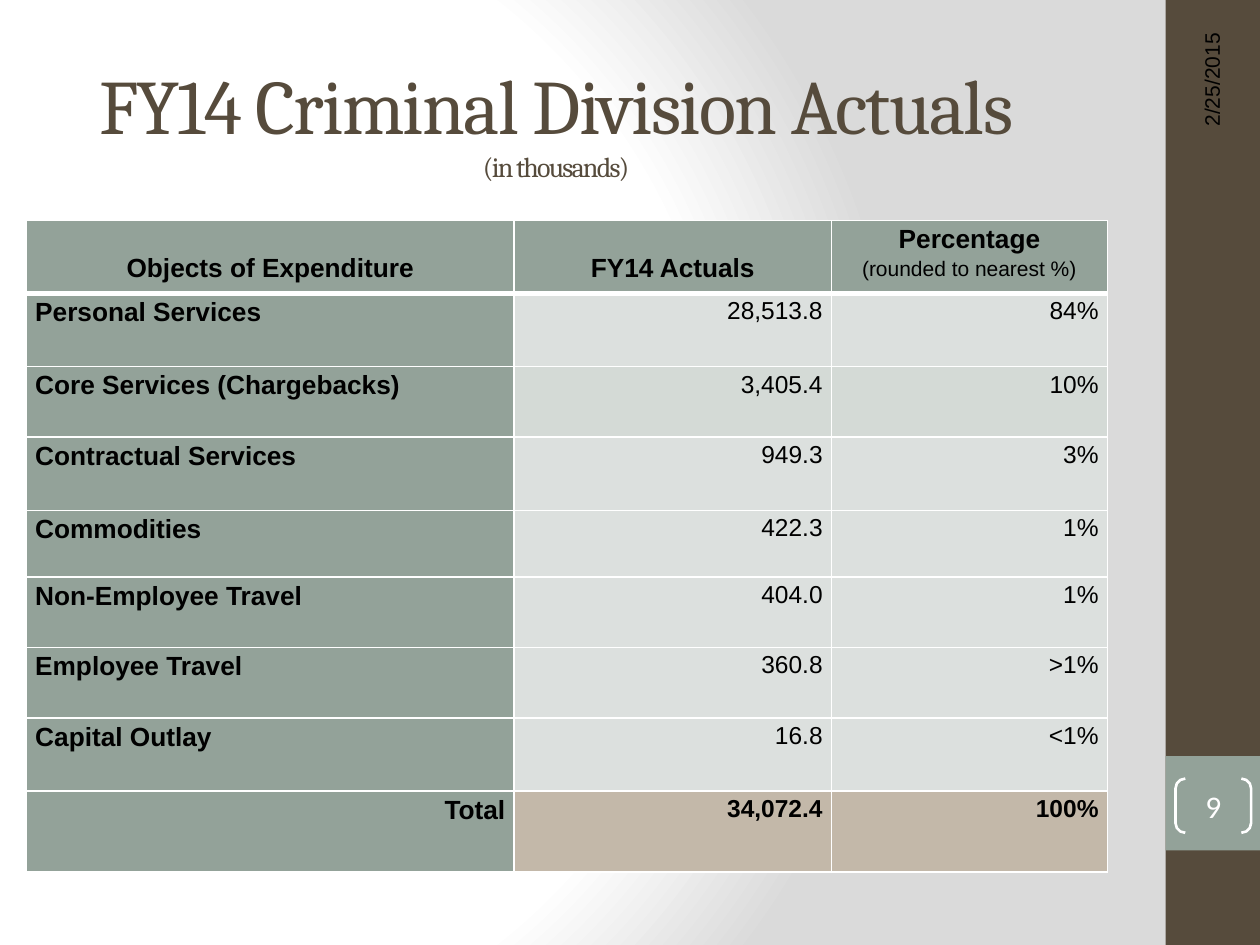
from lxml import etree
from pptx import Presentation
from pptx.dml.color import RGBColor
from pptx.enum.shapes import MSO_SHAPE as Shape
from pptx.enum.text import MSO_ANCHOR as Anchor, PP_ALIGN as Align
from pptx.oxml.ns import qn
from pptx.util import Inches, Pt

WHITE = RGBColor(0xFF, 0xFF, 0xFF)
BLACK = RGBColor(0x00, 0x00, 0x00)
BROWN = RGBColor(0x56, 0x4B, 0x3C)
SAGE = RGBColor(0x93, 0xA2, 0x99)
PALE = RGBColor(0xDC, 0xE0, 0xDE)
PALE_GREEN = RGBColor(0xD4, 0xDA, 0xD6)
TAN = RGBColor(0xC3, 0xB8, 0xA9)
GREY = RGBColor(0xDA, 0xDA, 0xDA)

COLUMN_WIDTHS = [3.87, 2.52, 2.19]
ROW_HEIGHTS = [0.58, 0.58, 0.56, 0.58, 0.53, 0.56, 0.56, 0.58, 0.64]
HEADER_LINE_HEIGHT = 0.23
HEADERS = [
    [("Objects of Expenditure", 15, True)],
    [("FY14 Actuals", 15, True)],
    [("Percentage", 15, True), ("(rounded to nearest %)", 12, False)],
]
EXPENDITURES = [
    ("Personal Services", "28,513.8", "84%"),
    ("Core Services (Chargebacks)", "3,405.4", "10%"),
    ("Contractual Services", "949.3", "3%"),
    ("Commodities", "422.3", "1%"),
    ("Non-Employee Travel", "404.0", "1%"),
    ("Employee Travel", "360.8", ">1%"),
    ("Capital Outlay", "16.8", "<1%"),
    ("Total", "34,072.4", "100%"),
]


class SlideBuilder:
    body_font = "Arial"
    title_font = "Cambria"
    number_font = "Calibri"

    def __init__(self, slide):
        self.slide = slide

    def add_run(self, paragraph, text, size, color=BLACK, font=None, bold=False):
        run = paragraph.add_run()
        run.text = text
        run.font.name = font or self.body_font
        run.font.size = Pt(size)
        run.font.bold = bold
        run.font.color.rgb = color
        return run

    def set_background(self, stops, focus):
        """Fill the background with a circular gradient around the focus box."""
        self.slide.background.fill.solid()
        properties = next(self.slide.element.iter(qn("p:bgPr")))
        properties.remove(properties[0])
        gradient = etree.Element(qn("a:gradFill"), rotWithShape="1")
        stop_list = etree.SubElement(gradient, qn("a:gsLst"))
        for position, color in stops:
            stop = etree.SubElement(stop_list, qn("a:gs"), pos=str(position * 1000))
            etree.SubElement(stop, qn("a:srgbClr"), val=str(color))
        circle = etree.SubElement(gradient, qn("a:path"), path="circle")
        sides = {side: str(value * 1000) for side, value in zip("ltrb", focus)}
        etree.SubElement(circle, qn("a:fillToRect"), **sides)
        properties.insert(0, gradient)

    def add_title(self, box, text, subtitle):
        title = self.slide.shapes.title
        title.left, title.top, title.width, title.height = map(Inches, box)
        frame = title.text_frame
        frame.vertical_anchor = Anchor.MIDDLE
        paragraph = frame.paragraphs[0]
        paragraph.alignment = Align.CENTER
        first = self.add_run(paragraph, text, 44, BROWN, self.title_font)
        paragraph.add_line_break()
        second = self.add_run(paragraph, subtitle, 16, BROWN, self.title_font)
        for run in (first, second):
            run.font._element.set("spc", "-100")

    def add_block(self, box, color):
        block = self.slide.shapes.add_shape(Shape.RECTANGLE, *map(Inches, box))
        block.shadow.inherit = False
        block.fill.solid()
        block.fill.fore_color.rgb = color
        block.line.fill.background()

    def add_date(self, box, text):
        date = self.slide.shapes.add_textbox(*map(Inches, box))
        date.rotation = 270
        frame = date.text_frame
        frame.word_wrap = True
        frame.vertical_anchor = Anchor.MIDDLE
        paragraph = frame.paragraphs[0]
        paragraph.alignment = Align.RIGHT
        self.add_run(paragraph, text, 12)

    def add_page_number(self, box, text):
        bracket = self.slide.shapes.add_shape(Shape.DOUBLE_BRACKET, *map(Inches, box))
        bracket.adjustments[0] = 0.18
        bracket.shadow.inherit = False
        bracket.fill.background()
        bracket.line.color.rgb = WHITE
        bracket.line.width = Pt(1.5)
        frame = bracket.text_frame
        frame.margin_left = frame.margin_right = 0
        frame.margin_top = frame.margin_bottom = 0
        frame.vertical_anchor = Anchor.MIDDLE
        paragraph = frame.paragraphs[0]
        paragraph.alignment = Align.CENTER
        self.add_run(paragraph, text, 18, WHITE, self.number_font)

    def set_borders(self, cell, **widths):
        properties = cell._tc.get_or_add_tcPr()
        for side in "LRTB":
            width = Pt(widths.get(side, 1))
            line = etree.SubElement(properties, qn(f"a:ln{side}"), w=str(width))
            fill = etree.SubElement(line, qn("a:solidFill"))
            etree.SubElement(fill, qn("a:srgbClr"), val=str(WHITE))

    def fill_cell(self, cell, lines, alignment, color, margin_top=0, **borders):
        """Write one paragraph for each (text, size, bold) line and style the cell."""
        self.set_borders(cell, **borders)
        cell.fill.solid()
        cell.fill.fore_color.rgb = color
        cell.margin_left = cell.margin_right = Inches(0.07)
        cell.margin_top = Inches(margin_top)
        cell.margin_bottom = 0
        cell.vertical_anchor = Anchor.TOP
        frame = cell.text_frame
        for index, (text, size, bold) in enumerate(lines):
            paragraph = frame.add_paragraph() if index else frame.paragraphs[0]
            paragraph.alignment = alignment
            paragraph.line_spacing = 1.15
            self.add_run(paragraph, text, size, bold=bold)

    def add_expenditure_table(self, left, top):
        table = self.slide.shapes.add_table(
            len(ROW_HEIGHTS), len(COLUMN_WIDTHS), Inches(left), Inches(top),
            Inches(sum(COLUMN_WIDTHS)), Inches(sum(ROW_HEIGHTS)),
        ).table
        for column, width in zip(table.columns, COLUMN_WIDTHS):
            column.width = Inches(width)
        for row, height in zip(table.rows, ROW_HEIGHTS):
            row.height = Inches(height)

        for index, lines in enumerate(HEADERS):
            # One-line headers sit level with the second line of the last header.
            margin_top = HEADER_LINE_HEIGHT if len(lines) == 1 else 0
            self.fill_cell(table.cell(0, index), lines, Align.CENTER, SAGE,
                           margin_top, B=3)
        value_colors = {2: PALE_GREEN, len(EXPENDITURES): TAN}
        for row, (name, *values) in enumerate(EXPENDITURES, start=1):
            is_total = row == len(EXPENDITURES)
            top_width = 3 if row == 1 else 1
            self.fill_cell(table.cell(row, 0), [(name, 15, True)],
                           Align.RIGHT if is_total else Align.LEFT, SAGE, T=top_width)
            for column, value in enumerate(values, start=1):
                self.fill_cell(table.cell(row, column), [(value, 14, is_total)],
                               Align.RIGHT, value_colors.get(row, PALE), T=top_width)


def main():
    presentation = Presentation()
    presentation.slide_width = Inches(10)
    presentation.slide_height = Inches(7.5)
    title_only = presentation.slide_layouts[5]
    builder = SlideBuilder(presentation.slides.add_slide(title_only))

    builder.set_background([(0, WHITE), (75, WHITE), (100, GREY)], (20, 50, 100, 50))
    builder.add_block((9.25, 0, 0.75, 7.5), BROWN)
    builder.add_block((9.25, 6, 0.75, 0.75), SAGE)
    builder.add_date((8.28, 1.3, 2.67, 0.4), "2/25/2015")
    builder.add_page_number((9.33, 6.18, 0.6, 0.43), "9")
    builder.add_expenditure_table(0.21, 1.75)
    builder.add_title((0.25, 0.33, 8.33, 1.25),
                      "FY14 Criminal Division Actuals", "(in thousands)")
    presentation.save("out.pptx")


if __name__ == "__main__":
    main()
